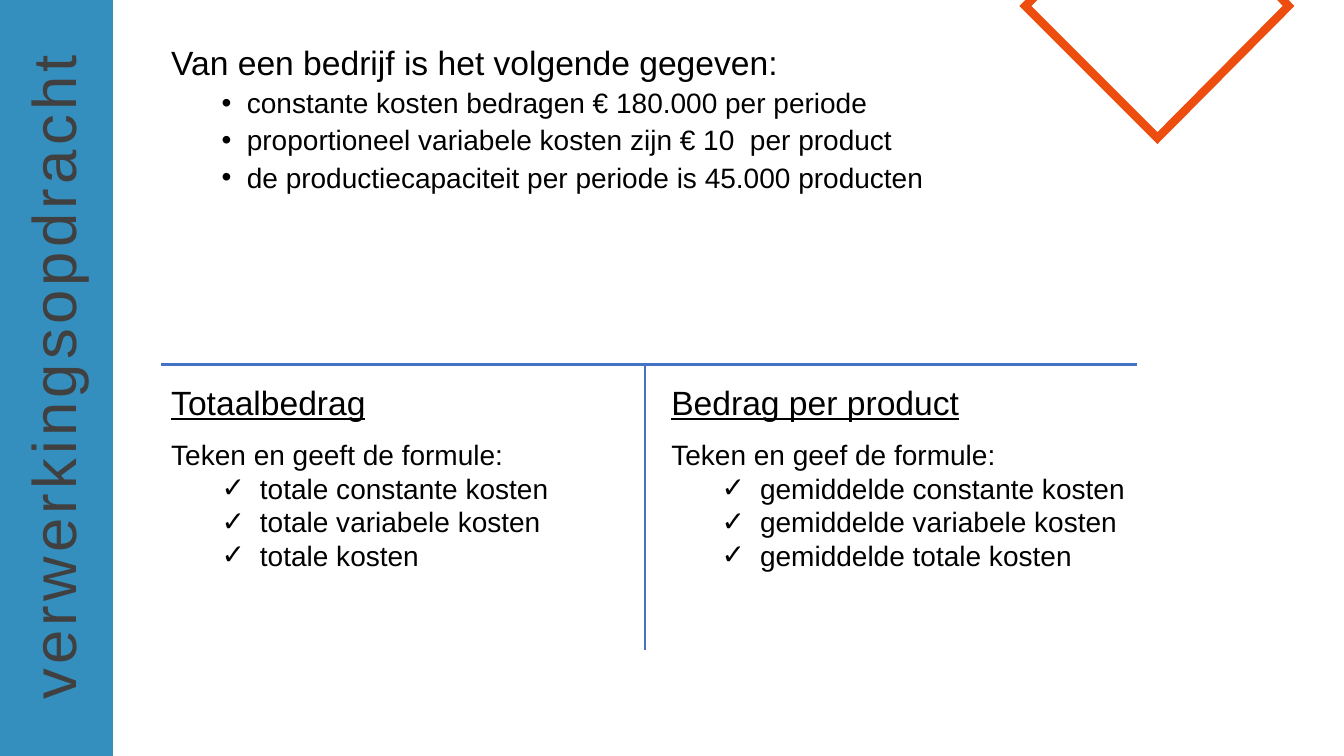
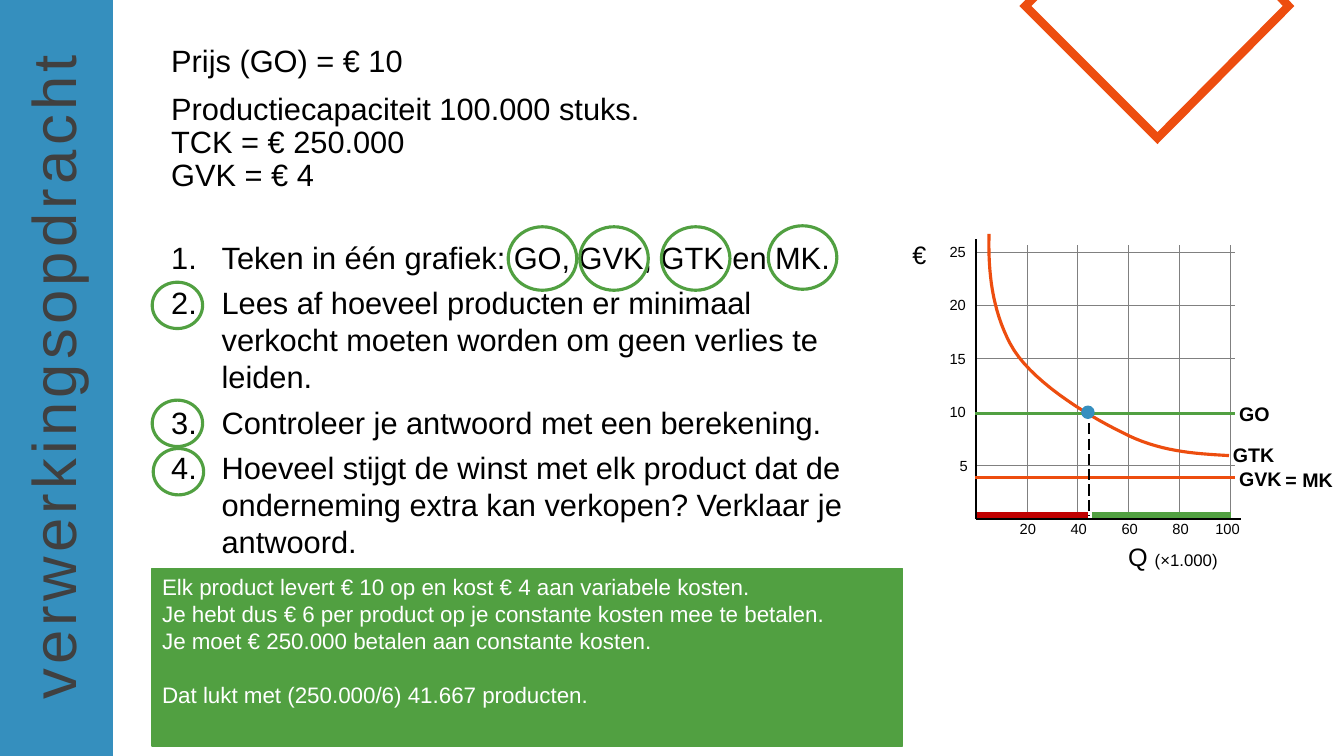
"""Build two exercise slides on costs, prices and break-even."""
import lxml.etree
import pptx
import pptx.dml.color
import pptx.enum.dml
import pptx.enum.shapes
import pptx.enum.text
import pptx.oxml.ns
import pptx.util

Inches = pptx.util.Inches
Pt = pptx.util.Pt
KIND = pptx.enum.shapes.MSO_SHAPE
qn = pptx.oxml.ns.qn

FONT = "Arial"
HEX = {"blue": "1A80B6", "dot": "368FBF", "rule": "4472C4", "orange": "ED4D0F",
       "green": "51A041", "red": "C00000", "grid": "808080", "dark": "404040",
       "black": "000000", "white": "FFFFFF"}

STYLES = {
    "side": {"size": 44, "color": "dark", "track": 3},
    "intro": {"size": 24, "line": 0.9, "before": 10},
    "fact": {"size": 20, "line": 0.9, "before": 5, "left": 0.75, "hang": 0.25, "mark": "•"},
    "head": {"size": 24, "under": True},
    "task": {"size": 20},
    "check": {"size": 20, "left": 0.88, "hang": 0.38, "mark": "✓"},
    "given": {"size": 22, "line": 0.9, "before": 10},
    "step": {"size": 22, "after": 6, "left": 0.5, "hang": 0.5, "mark": "1."},
    "answer": {"size": 16, "color": "white"},
    "result": {"size": 16, "color": "white", "before": 19},
    "tick": {"size": 10.5},
    "axis": {"size": 18},
    "name": {"size": 14, "bold": True},
}

SIDE = "verwerkingsopdracht"
DIAMOND = [(10.3, -0.07), (12.66, -0.07), (12.78, 0.06), (11.48, 1.37), (10.17, 0.06)]

FACTS = [
    ("intro", "Van een bedrijf is het volgende gegeven:"),
    ("fact", "constante kosten bedragen € 180.000 per periode"),
    ("fact", "proportioneel variabele kosten zijn € 10  per product"),
    ("fact", "de productiecapaciteit per periode is 45.000 producten"),
]
COLUMNS = [
    (1.6, "Totaalbedrag", "Teken en geeft de formule:",
     ["totale constante kosten", "totale variabele kosten", "totale kosten"]),
    (6.56, "Bedrag per product", "Teken en geef de formule:",
     ["gemiddelde constante kosten", "gemiddelde variabele kosten",
      "gemiddelde totale kosten"]),
]

GIVEN = [
    ("given", "Prijs (GO) = € 10"),
    ("given", "Productiecapaciteit 100.000 stuks.\nTCK = € 250.000\nGVK = € 4"),
]
STEPS = [
    ("step", "Teken in één grafiek: GO, GVK, GTK en MK."),
    ("step", "Lees af hoeveel producten er minimaal verkocht moeten worden "
             "om geen verlies te leiden."),
    ("step", "Controleer je antwoord met een berekening."),
    ("step", "Hoeveel stijgt de winst met elk product dat de onderneming extra "
             "kan verkopen? Verklaar je antwoord."),
]
ANSWER = [
    ("answer", "Elk product levert € 10 op en kost € 4 aan variabele kosten."),
    ("answer", "Je hebt dus € 6 per product op je constante kosten mee te betalen."),
    ("answer", "Je moet € 250.000 betalen aan constante kosten."),
    ("result", "Dat lukt met (250.000/6) 41.667 producten."),
]
TERMS = [(5.04, 2.25), (5.75, 2.25), (6.56, 2.25), (7.62, 2.24)]
NUMBERS = [(1.51, 2.8), (1.51, 3.97), (1.52, 4.45)]

LEFT, BASE = 9.68, 5.15
COL, ROW = 0.505, 0.53
PRICES = [5, 10, 15, 20, 25]
AMOUNTS = [20, 40, 60, 80, 100]
LEVELS = [(4.1, "green"), (4.74, "orange")]
NAMES = [("GO", 12.19, 3.94), ("GVK", 12.19, 4.58), ("GTK", 12.13, 4.34),
         ("= MK", 12.65, 4.59)]
CURVE = [(9.81, 2.32), (9.8, 2.7), (9.84, 3.07), (10.02, 3.41), (10.2, 3.76),
         (10.76, 4.11), (11.13, 4.29), (11.49, 4.48), (11.84, 4.5), (12.19, 4.52)]
ZONES = [(9.69, 10.79, "red"), (10.83, 12.21, "green")]


def paint(fmt, color):
    """Give a fill or font a solid colour."""
    fmt.rgb = pptx.dml.color.RGBColor.from_string(HEX[color])


def style(par, name):
    """Apply a named style to a paragraph."""
    look = STYLES[name]
    par.alignment = pptx.enum.text.PP_ALIGN.LEFT
    if "line" in look:
        par.line_spacing = look["line"]
    par.space_before = Pt(look.get("before", 0))
    par.space_after = Pt(look.get("after", 0))
    if "mark" in look:
        props = par._p.get_or_add_pPr()
        props.set("marL", str(Inches(look["left"])))
        props.set("indent", str(-Inches(look["hang"])))
        if look["mark"] == "1.":
            lxml.etree.SubElement(props, qn("a:buAutoNum"), type="arabicPeriod")
        else:
            lxml.etree.SubElement(props, qn("a:buFont"), typeface=FONT)
            lxml.etree.SubElement(props, qn("a:buChar"), char=look["mark"])
    font = par.font
    font.name, font.size = FONT, Pt(look["size"])
    font.bold, font.underline = look.get("bold"), look.get("under")
    paint(font.color, look.get("color", "black"))
    if "track" in look:
        font._rPr.set("spc", str(look["track"] * 100))


def write(shape, lines, wrap=True):
    """Fill a shape with styled paragraphs."""
    frame = shape.text_frame
    frame.word_wrap = wrap
    frame.vertical_anchor = pptx.enum.text.MSO_ANCHOR.TOP
    for i, (name, text) in enumerate(lines):
        par = frame.add_paragraph() if i else frame.paragraphs[0]
        par.text = text
        style(par, name)
    return frame


def box(slide, place, lines, wrap=True):
    """Add a text box."""
    shape = slide.shapes.add_textbox(*map(Inches, place))
    write(shape, lines, wrap)
    return shape


def label(slide, place, name, text):
    """Add a short label without right margin."""
    frame = box(slide, place, [(name, text)]).text_frame
    frame.margin_right = 0
    return frame.paragraphs[0]


def finish(shape, fill=None, edge=None, width=1):
    """Set the fill and outline and drop the shadow."""
    shape.shadow.inherit = False
    if fill:
        shape.fill.solid()
        paint(shape.fill.fore_color, fill)
    else:
        shape.fill.background()
    if edge:
        paint(shape.line.color, edge)
        shape.line.width = Pt(width)
    else:
        shape.line.fill.background()
    return shape


def form(slide, kind, place, **look):
    """Add a preset shape."""
    return finish(slide.shapes.add_shape(kind, *map(Inches, place)), **look)


def outline(slide, points, close, width):
    """Add an orange outline through points."""
    spots = [(Inches(x), Inches(y)) for x, y in points]
    pen = slide.shapes.build_freeform(*spots[0])
    pen.add_line_segments(spots[1:], close=close)
    shape = finish(pen.convert_to_shape(), edge="orange", width=width)
    lxml.etree.SubElement(shape.line._get_or_add_ln(), qn("a:miter"), lim="800000")


def rule(slide, ends, color, width):
    """Add a straight line."""
    kind = pptx.enum.shapes.MSO_CONNECTOR.STRAIGHT
    line = slide.shapes.add_connector(kind, *map(Inches, ends))
    paint(line.line.color, color)
    line.line.width = Pt(width)
    lxml.etree.SubElement(line._element.spPr, qn("a:effectLst"))
    return line


def trace(points, steps=16):
    """Sample a chain of cubic curves."""
    path = [points[0]]
    for i in range(0, len(points) - 1, 3):
        for k in range(1, steps + 1):
            t = k / steps
            u = 1 - t
            mix = (u ** 3, 3 * u * u * t, 3 * u * t * t, t ** 3)
            path.append(tuple(sum(m * p[d] for m, p in zip(mix, points[i:i + 4]))
                              for d in (0, 1)))
    return path


def start(deck):
    """Add a slide with the shared band, title and diamond."""
    slide = deck.slides.add_slide(deck.slide_layouts[6])
    outline(slide, DIAMOND, True, 6)
    band = form(slide, KIND.RECTANGLE, (0, -0.01, 1.12, 7.51), fill="blue")
    tint = band._element.spPr.find(qn("a:solidFill"))[0]
    lxml.etree.SubElement(tint, qn("a:alpha"), val="88000")
    box(slide, (-2.83, 3.27, 6.7, 0.84), [("side", SIDE)], False).rotation = 270
    return slide


def costs(slide):
    """Draw the facts and the two task columns."""
    box(slide, (1.6, 0.41, 11.4, 1.76), FACTS)
    rule(slide, (6.4, 3.62, 6.4, 6.45), "rule", 1.5)
    rule(slide, (1.6, 3.62, 11.28, 3.62), "rule", 2.25)
    for x, head, task, checks in COLUMNS:
        box(slide, (x, 3.74, 5.11, 0.5), [("head", head)])
        box(slide, (x, 4.29, 5.2, 1.45),
            [("task", task)] + [("check", item) for item in checks])


def graph(slide):
    """Draw the price and cost graph."""
    for i, price in enumerate(PRICES, 1):
        y = BASE - i * ROW
        rule(slide, (LEFT, y, 12.25, y), "grid", 0.5)
        x = 9.42 if price < 10 else 9.32
        label(slide, (x, y - 0.14, 0.47, 0.38), "tick", str(price))
    for i, amount in enumerate(AMOUNTS, 1):
        x = LEFT + i * COL
        rule(slide, (x, BASE, x, 2.43), "grid", 0.5)
        shift = 0.25 if amount == 100 else 0.17
        label(slide, (x - shift, 5.11, 0.58, 0.38), "tick", str(amount))
    rule(slide, (LEFT, BASE, 12.31, BASE), "black", 1)
    rule(slide, (LEFT, BASE, LEFT, 2.37), "black", 1)
    label(slide, (8.95, 2.32, 0.44, 0.55), "axis", "€")
    unit = label(slide, (11.09, 5.32, 1.41, 0.55), "axis", "Q ").add_run()
    unit.text = "(×1.000)"
    unit.font.size = Pt(12)
    for y, color in LEVELS:
        rule(slide, (9.67, y, 12.25, y), color, 2.25)
    outline(slide, trace(CURVE), False, 2.25)
    for text, x, y in NAMES:
        label(slide, (x, y, 0.68, 0.34), "name", text)
    form(slide, KIND.OVAL, (10.73, 4.03, 0.12, 0.12), fill="dot", edge="dot")
    drop = rule(slide, (10.8, 4.2, 10.8, 5.11), "black", 1)
    drop.line.dash_style = pptx.enum.dml.MSO_LINE.LONG_DASH
    for x, end, color in ZONES:
        rule(slide, (x, 5.11, end, 5.11), color, 4.5)


def profit(slide):
    """Draw the questions, graph, rings and answer."""
    box(slide, (1.6, 0.41, 11.4, 1.76), GIVEN)
    box(slide, (1.6, 2.32, 6.88, 3.32), STEPS)
    graph(slide)
    for spots, size in ((TERMS, (0.68, 0.63)), (NUMBERS, (0.5, 0.46))):
        for spot in spots:
            form(slide, KIND.OVAL, spot + size, edge="green", width=2.25)
    panel = form(slide, KIND.RECTANGLE, (1.51, 5.64, 7.44, 1.76),
                 fill="green", edge="green")
    write(panel, ANSWER)


def main():
    """Build and save the deck."""
    deck = pptx.Presentation()
    deck.slide_width, deck.slide_height = Inches(13.33), Inches(7.5)
    for draw in (costs, profit):
        draw(start(deck))
    deck.save("out.pptx")


if __name__ == "__main__":
    main()
